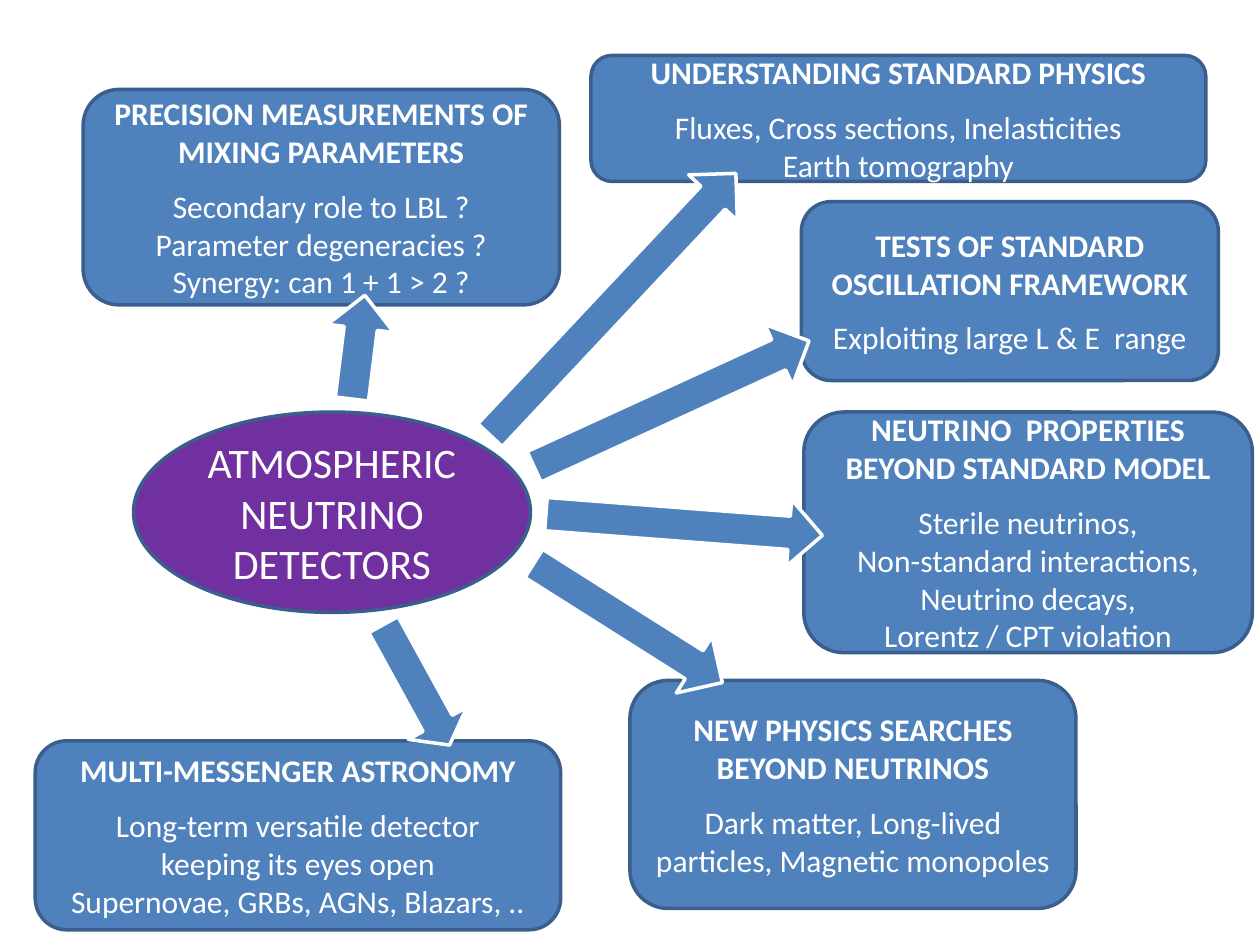
from pptx import Presentation
from pptx.dml.color import RGBColor
from pptx.enum.shapes import MSO_SHAPE
from pptx.enum.text import MSO_ANCHOR, PP_ALIGN
from pptx.util import Inches, Pt

ROUNDED = MSO_SHAPE.ROUNDED_RECTANGLE
OVAL = MSO_SHAPE.OVAL
ARROW = MSO_SHAPE.RIGHT_ARROW
MIDDLE = MSO_ANCHOR.MIDDLE
CENTER = PP_ALIGN.CENTER

BLUE, PURPLE, OUTLINE, WHITE = "4F81BD", "7030A0", "3A5F8C", "FFFFFF"
ARROW_HEIGHT = 0.53

# Left, top, width, height; heading; body lines
TOPICS = [
    ((0.66, 0.71, 3.78, 1.71), "PRECISION MEASUREMENTS OF MIXING PARAMETERS",
     ["Secondary role to LBL ?", "Parameter degeneracies ?",
      "Synergy: can 1 + 1 > 2 ?"]),
    ((4.69, 0.44, 4.88, 1), "UNDERSTANDING STANDARD PHYSICS",
     ["Fluxes, Cross sections, Inelasticities", "Earth tomography"]),
    ((6.36, 1.6, 3.31, 1.42), "TESTS OF STANDARD OSCILLATION FRAMEWORK",
     ["Exploiting large L & E  range"]),
    ((6.38, 3.27, 3.56, 1.91), "NEUTRINO  PROPERTIES BEYOND STANDARD MODEL",
     ["Sterile neutrinos,", "Non-standard interactions, Neutrino decays,",
      "Lorentz / CPT violation"]),
    ((5, 5.4, 3.54, 1.81), "NEW PHYSICS SEARCHES BEYOND NEUTRINOS",
     ["Dark matter, Long-lived particles, Magnetic monopoles"]),
    ((0.28, 5.88, 4.17, 1.5), "MULTI-MESSENGER ASTRONOMY",
     ["Long-term versatile detector", "keeping its eyes open",
      "Supernovae, GRBs, AGNs, Blazars, .."]),
]

# Left, top, width, rotation in degrees, head length relative to height
ARROWS = [
    (2.43, 2.49, 0.83, 277.1, 0.5),
    (4.33, 3.9, 2.2, 4.4, 0.5),
    (4.13, 2.94, 2.4, 335.4, 0.5),
    (4.1, 4.68, 1.77, 32.3, 0.5),
    (2.76, 5.17, 1.09, 61.2, 0.37),
    (3.44, 2.15, 2.85, 313.2, 0.5),
]


def color(value):
    return RGBColor.from_string(value)


def add_filled_shape(kind, box, fill, line, lines=(), size=18):
    """Add a flat shape with one centred paragraph for each line of text."""
    shape = slide.shapes.add_shape(kind, *(Inches(length) for length in box))
    shape.shadow.inherit = False
    shape.fill.solid()
    shape.fill.fore_color.rgb = color(fill)
    shape.line.color.rgb = color(line)
    shape.line.width = Pt(2)
    frame = shape.text_frame
    frame.word_wrap = True
    frame.vertical_anchor = MIDDLE
    for index, text in enumerate(lines):
        paragraph = frame.add_paragraph() if index else frame.paragraphs[0]
        paragraph.text = text
        paragraph.alignment = CENTER
        paragraph.font.name = "Calibri"
        paragraph.font.size = Pt(size)
        paragraph.font.color.rgb = color(WHITE)
    return shape


presentation = Presentation()
presentation.slide_width = Inches(10)
presentation.slide_height = Inches(7.5)
slide = presentation.slides.add_slide(presentation.slide_layouts[6])

for box, heading, body in TOPICS:
    topic = add_filled_shape(ROUNDED, box, BLUE, OUTLINE, [heading, *body])
    heading_paragraph = topic.text_frame.paragraphs[0]
    heading_paragraph.font.bold = True
    heading_paragraph.space_after = Pt(9.75)

add_filled_shape(OVAL, (1.06, 3.27, 3.15, 1.59), PURPLE, OUTLINE,
                 ["ATMOSPHERIC NEUTRINO DETECTORS"], size=24)

for left, top, width, rotation, head_length in ARROWS:
    arrow = add_filled_shape(ARROW, (left, top, width, ARROW_HEIGHT), BLUE, WHITE)
    arrow.rotation = rotation
    arrow.adjustments[1] = head_length

presentation.save("out.pptx")
